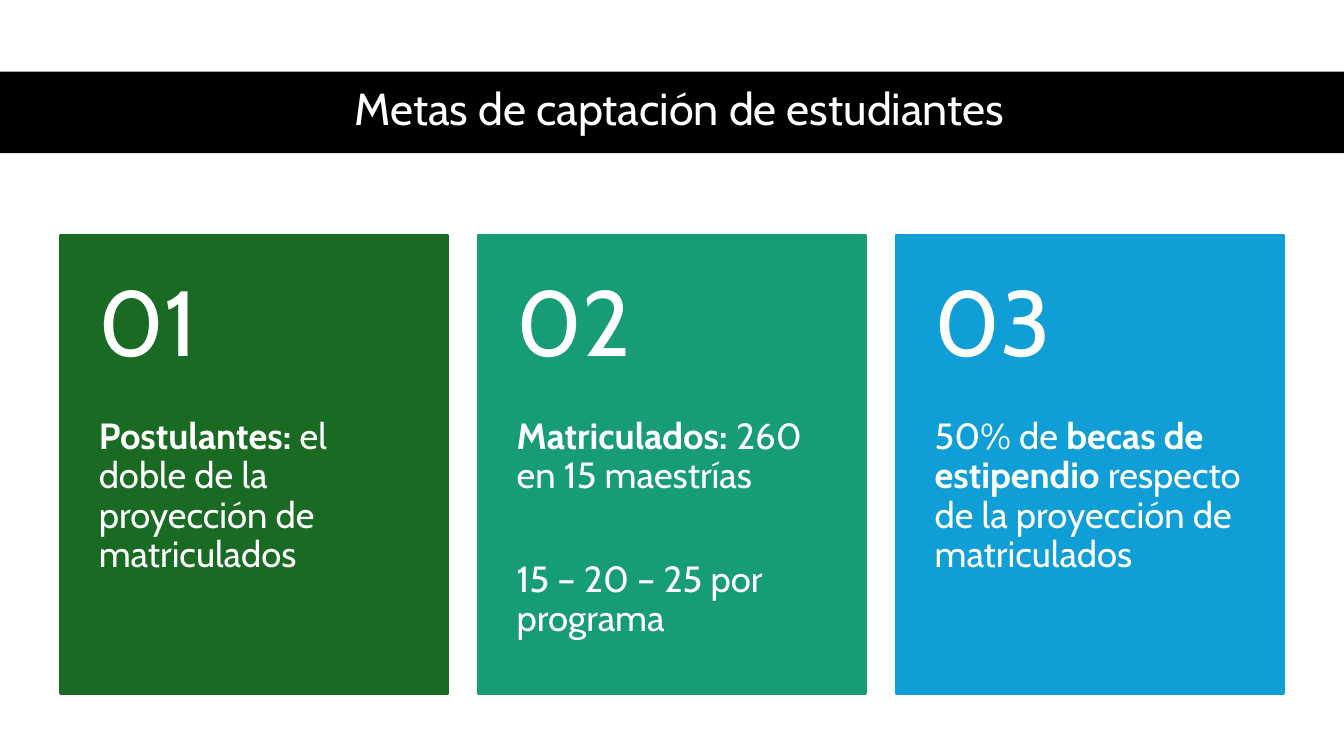
"""Build a slide with the student recruitment goals in three numbered cards."""
from dataclasses import dataclass

from pptx import Presentation
from pptx.dml.color import RGBColor
from pptx.enum.shapes import MSO_SHAPE
from pptx.enum.text import MSO_ANCHOR, PP_ALIGN
from pptx.util import Inches, Pt


@dataclass(frozen=True)
class Theme:
    font: str = "Cabin"
    white: str = "FFFFFF"
    band: str = "000000"
    cards: tuple = ("196B24", "179D76", "0F9ED5")
    title_size: int = 32
    number_size: int = 66
    body_size: int = 26
    border: float = 1.5


theme = Theme()
deck = Presentation()
deck.slide_width, deck.slide_height = Inches(13.33), Inches(7.5)
page = deck.slides.add_slide(deck.slide_layouts[6])


def add_block(left, top, width, height, color, border=None):
    block = page.shapes.add_shape(
        MSO_SHAPE.RECTANGLE, Inches(left), Inches(top), Inches(width), Inches(height))
    block.shadow.inherit = False
    block.fill.solid()
    block.fill.fore_color.rgb = RGBColor.from_string(color)
    if border:
        block.line.color.rgb = RGBColor.from_string(color)
        block.line.width = Pt(border)
    else:
        block.line.fill.background()


def add_text(paragraphs, left, top, width, height, *, size, align=PP_ALIGN.LEFT,
             anchor=MSO_ANCHOR.MIDDLE, side=0.38, above=0.18, below=0.18, gap=0):
    box = page.shapes.add_textbox(Inches(left), Inches(top), Inches(width), Inches(height))
    frame = box.text_frame
    frame.word_wrap = True
    frame.vertical_anchor = anchor
    frame.margin_left = frame.margin_right = Inches(side)
    frame.margin_top, frame.margin_bottom = Inches(above), Inches(below)
    for index, spans in enumerate(paragraphs):
        para = frame.paragraphs[0] if index == 0 else frame.add_paragraph()
        para.alignment = align
        para.line_spacing = 0.9
        para.space_before = Pt(gap if index else 0)
        for text, bold in spans:
            span = para.add_run()
            span.text = text
            span.font.name = theme.font
            span.font.size = Pt(size)
            span.font.bold = bold
            span.font.color.rgb = RGBColor.from_string(theme.white)


add_block(0, 0.71, 13.33, 0.81, theme.band)
add_text([[("Metas de captación de estudiantes", False)]], 0.61, 0.7, 12.26, 0.81,
         size=theme.title_size, align=PP_ALIGN.CENTER, side=0.1, above=0.05, below=0.05)

goals = [
    [[("Postulantes: ", True), ("el doble de la proyección de matriculados", False)]],
    [[("Matriculados: ", True), ("260 en 15 maestrías", False)],
     [("15 – 20 – 25 por programa", False)]],
    [[("50% de ", False), ("becas de estipendio ", True),
      ("respecto de la proyección de matriculados", False)]],
]
first_left, last_left, card_top = 0.6, 8.89, 2.33
card_width, card_height, number_height = 3.84, 4.55, 1.82
step = (last_left - first_left) / (len(goals) - 1)

for index, (goal, color) in enumerate(zip(goals, theme.cards)):
    left = first_left + index * step
    add_block(left, card_top, card_width, card_height, color, border=theme.border)
    add_text(goal, left, card_top + number_height, card_width, card_height - number_height,
             size=theme.body_size, anchor=MSO_ANCHOR.TOP, above=0, below=0.36, gap=46)
    add_text([[(f"{index + 1:02}", False)]], left, card_top, card_width, number_height,
             size=theme.number_size)

deck.save("out.pptx")
